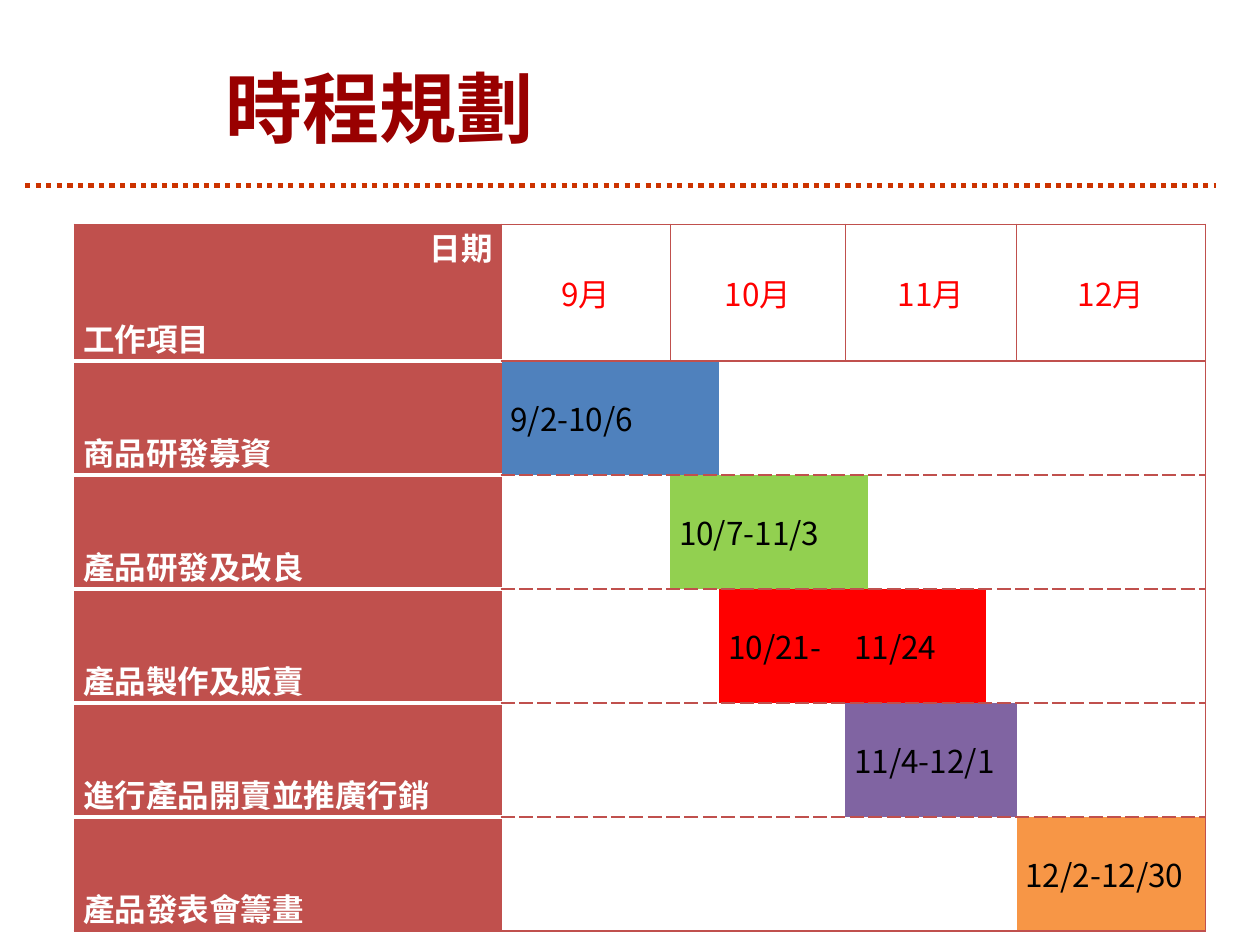
from dataclasses import dataclass

from lxml import etree
from pptx import Presentation
from pptx.dml.color import RGBColor
from pptx.enum.dml import MSO_LINE
from pptx.enum.shapes import MSO_CONNECTOR
from pptx.enum.text import MSO_ANCHOR, PP_ALIGN
from pptx.oxml.ns import qn
from pptx.util import Inches, Pt


@dataclass(frozen=True)
class Theme:
    font: str = "Noto Sans CJK SC"
    title_size: int = 44
    table_size: int = 18
    title: str = "990000"
    rule: str = "CC3300"
    grid: str = "C0504D"
    white: str = "FFFFFF"
    black: str = "000000"
    month: str = "FF0000"
    blue: str = "4F81BD"
    green: str = "92D050"
    red: str = "FF0000"
    purple: str = "8064A2"
    orange: str = "F79646"


THEME = Theme()
PLAIN_TABLE_STYLE = "{2D5ABB26-0587-4C30-8999-92F81FD0307C}"
COLUMN_WIDTHS = (3.39, 1.34, 0.39, 1, 0.18, 0.94, 0.24, 1.5)
HEADER_HEIGHT, TASK_HEIGHT = 1.08, 0.9

# Border kinds: colour, width in points, dash
SOLID = (THEME.grid, 1, "solid")
DASHED = (THEME.grid, 1.5, "sysDash")
GAP = (THEME.white, 3, "solid")

# Months: first column, column span, text
MONTHS = ((1, 1, "9月"), (2, 2, "10月"), (4, 3, "11月"), (7, 1, "12月"))

# Tasks: label, then (first column, column span, text, fill) for each block
TASKS = (
    ("商品研發募資", ((1, 1, "9/2-10/6", THEME.blue), (2, 1, "", THEME.blue),
                (4, 3, "", None))),
    ("產品研發及改良", ((2, 2, "10/7-11/3", THEME.green), (4, 1, "", THEME.green),
                 (5, 2, "", None))),
    ("產品製作及販賣", ((3, 1, "10/21-", THEME.red), (4, 2, "11/24", THEME.red),
                 (6, 1, "", THEME.white))),
    ("進行產品開賣並推廣行銷", ((2, 2, "", None), (4, 3, "11/4-12/1", THEME.purple))),
    ("產品發表會籌畫", ((2, 2, "", None), (4, 3, "", None),
                 (7, 1, "12/2-12/30", THEME.orange))),
)


def set_format(target, values):
    for name, value in values.items():
        setattr(target, name, value)


def write(para, text, color, size=THEME.table_size, bold=False, **layout):
    set_format(para, layout)
    span = para.add_run()
    span.text = text
    set_format(span.font, {"name": THEME.font, "size": Pt(size), "bold": bold})
    span.font.color.rgb = RGBColor.from_string(color)
    east_asian = etree.SubElement(span.font._element, qn("a:ea"))
    east_asian.set("typeface", THEME.font)


def fill_cell(cell, color):
    if color:
        cell.fill.solid()
        cell.fill.fore_color.rgb = RGBColor.from_string(color)
    else:
        cell.fill.background()


def set_borders(cell, left=None, right=None, top=None, bottom=None):
    properties = cell._tc.get_or_add_tcPr()
    sides = {"lnL": left, "lnR": right, "lnT": top, "lnB": bottom}
    for index, (tag, border) in enumerate(sides.items()):
        line = etree.Element(qn(f"a:{tag}"))
        if border:
            color, width, dash = border
            line.set("w", str(Pt(width)))
            fill = etree.SubElement(line, qn("a:solidFill"))
            etree.SubElement(fill, qn("a:srgbClr")).set("val", color)
            etree.SubElement(line, qn("a:prstDash")).set("val", dash)
        else:
            line.set("w", "0")
            etree.SubElement(line, qn("a:noFill"))
        properties.insert(index, line)


def merge_across(table, row, first, count):
    cell = table.cell(row, first)
    if count > 1:
        cell.merge(table.cell(row, first + count - 1))
    return cell


def add_title(page, left, top, width, height):
    title = page.shapes.title
    set_format(title, {"left": left, "top": top, "width": width, "height": height})
    title.text_frame.vertical_anchor = MSO_ANCHOR.MIDDLE
    write(title.text_frame.paragraphs[0], "時程規劃", THEME.title,
          THEME.title_size, True, alignment=PP_ALIGN.LEFT)


def add_rule(page, left, top, width):
    rule = page.shapes.add_connector(MSO_CONNECTOR.STRAIGHT, left, top, left + width, top)
    set_format(rule.line, {"width": Pt(3), "dash_style": MSO_LINE.ROUND_DOT})
    rule.line.color.rgb = RGBColor.from_string(THEME.rule)
    etree.SubElement(rule._element.spPr, qn("a:effectLst"))


def fill_header(table):
    # Corner cell names both axes
    frame = table.cell(0, 0).text_frame
    table.cell(0, 0).vertical_anchor = MSO_ANCHOR.TOP
    write(frame.paragraphs[0], "日期", THEME.white, bold=True, alignment=PP_ALIGN.RIGHT)
    write(frame.add_paragraph(), "工作項目", THEME.white, bold=True, space_before=Pt(26))
    for first, count, month in MONTHS:
        cell = merge_across(table, 0, first, count)
        write(cell.text_frame.paragraphs[0], month, THEME.month, alignment=PP_ALIGN.CENTER)


def fill_task(table, row, label, blocks):
    write(table.cell(row, 0).text_frame.paragraphs[0], label, THEME.white,
          bold=True, line_spacing=2.5)
    for first, count, dates, color in blocks:
        cell = merge_across(table, row, first, count)
        fill_cell(cell, color)
        if dates:
            write(cell.text_frame.paragraphs[0], dates, THEME.black)


def style_grid(table):
    last_row, last_column = len(TASKS), len(COLUMN_WIDTHS) - 1
    month_starts = {first for first, _, _ in MONTHS}
    month_ends = {first + count - 1 for first, count, _ in MONTHS}
    for row in range(last_row + 1):
        for column in range(last_column + 1):
            cell = table.cell(row, column)
            set_format(cell, {"margin_left": Inches(0.07), "margin_right": Inches(0.07),
                              "margin_top": 0, "margin_bottom": 0,
                              "vertical_anchor": MSO_ANCHOR.MIDDLE})
            fill_cell(cell, THEME.grid if column == 0 else None)
            between = GAP if column == 0 else DASHED
            header_edge = GAP if column == 0 else SOLID
            starts = column <= 1 or (row == 0 and column in month_starts)
            ends = column in (0, last_column) or (row == 0 and column in month_ends)
            set_borders(
                cell,
                left=SOLID if starts else None,
                right=SOLID if ends else None,
                top=SOLID if row == 0 else header_edge if row == 1 else between,
                bottom=SOLID if row == last_row else header_edge if row == 0 else between,
            )


def add_schedule(page, left, top, width, height):
    table = page.shapes.add_table(len(TASKS) + 1, len(COLUMN_WIDTHS),
                                  left, top, width, height).table
    set_format(table, {"first_row": False, "horz_banding": False})
    table._tbl.tblPr.find(qn("a:tableStyleId")).text = PLAIN_TABLE_STYLE
    for column, size in zip(table.columns, COLUMN_WIDTHS):
        column.width = Inches(size)
    for index, row in enumerate(table.rows):
        row.height = Inches(TASK_HEIGHT if index else HEADER_HEIGHT)
    style_grid(table)
    fill_header(table)
    for row, (label, blocks) in enumerate(TASKS, start=1):
        fill_task(table, row, label, blocks)


def main():
    deck = Presentation()
    set_format(deck, {"slide_width": Inches(10), "slide_height": Inches(7.5)})
    page = deck.slides.add_slide(deck.slide_layouts[5])
    add_rule(page, Inches(0.2), Inches(1.47), Inches(9.45))
    add_title(page, Inches(1.69), Inches(0.22), Inches(7.65), Inches(1.25))
    add_schedule(page, Inches(0.59), Inches(1.78), Inches(sum(COLUMN_WIDTHS)),
                 Inches(HEADER_HEIGHT + TASK_HEIGHT * len(TASKS)))
    deck.save("out.pptx")


if __name__ == "__main__":
    main()
